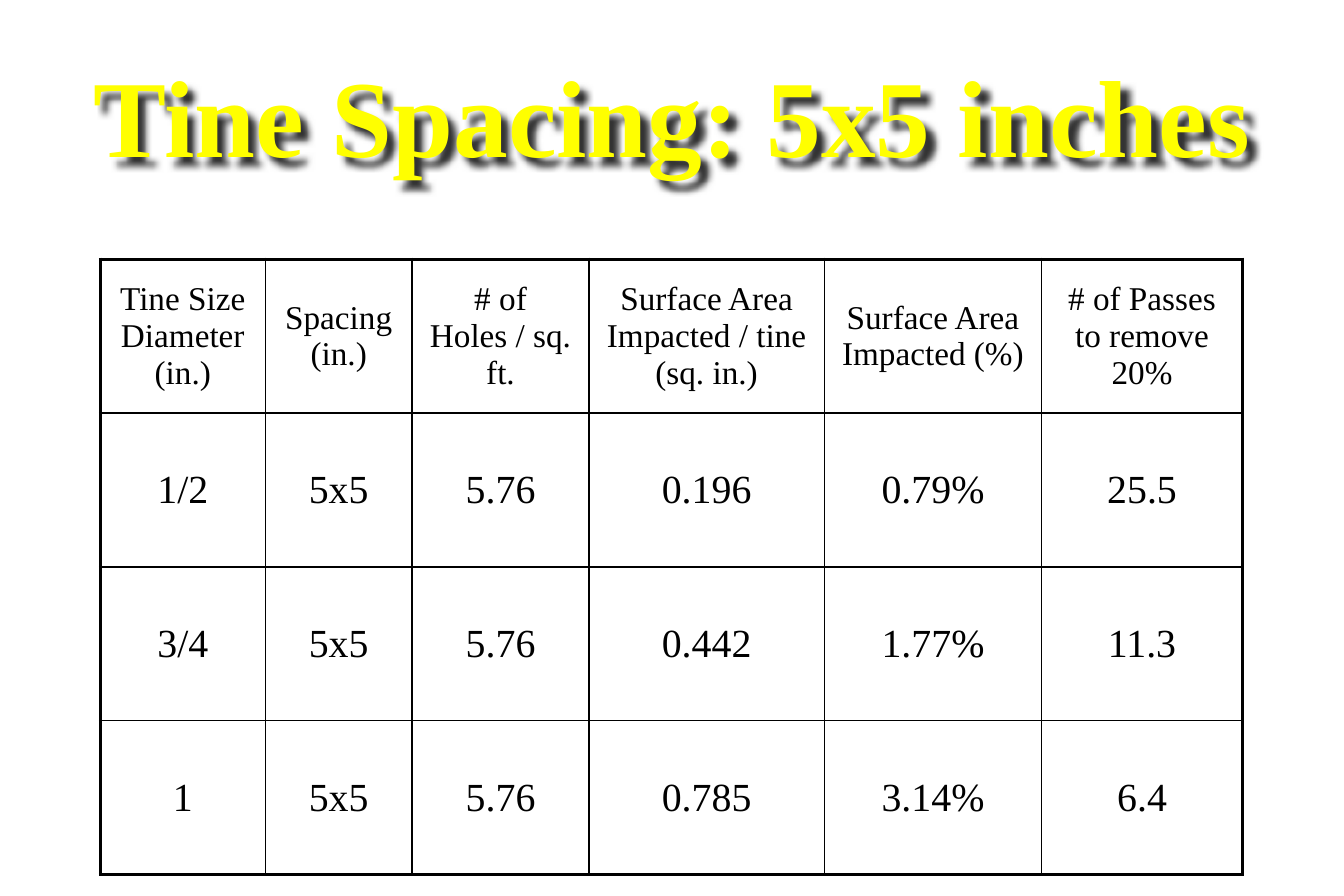
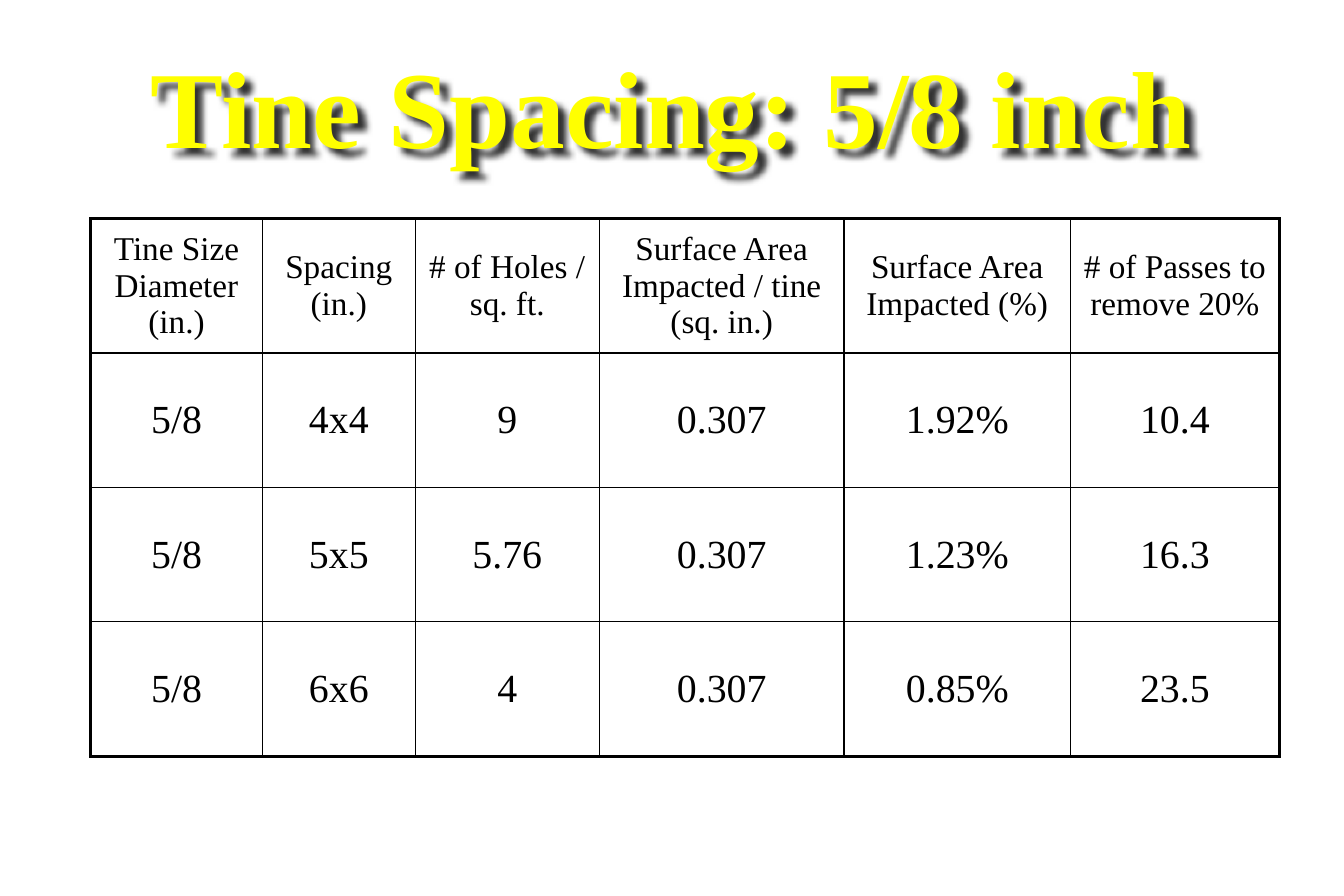
from dataclasses import dataclass

from lxml import etree
from pptx import Presentation
from pptx import util as u
from pptx.dml.color import RGBColor
from pptx.enum import text
from pptx.oxml import ns

EMU_PER_PX = 4572  # 200 px to the inch


@dataclass(frozen=True)
class Theme:
    font: str = "Times New Roman"
    title_color: str = "FFFF00"
    ink: str = "000000"
    page_color: str = "FFFFFF"
    title_size: int = 66
    header_size: int = 20
    body_size: int = 24
    outer_line: float = 2.25
    inner_line: float = 1


THEME = Theme()
PAGE_SIZE = (2250, 1500)
COLUMN_SHARES = (138, 123, 148, 197, 182, 168)
HEADERS = (
    "Tine Size Diameter (in.)",
    "Spacing (in.)",
    "# of Holes / sq. ft.",
    "Surface Area Impacted / tine (sq. in.)",
    "Surface Area Impacted (%)",
    "# of Passes to remove 20%",
)
PAGES = (
    {
        "title": "Tine Spacing: 5x5 inches",
        "title_box": (84, 66, 2082, 250),
        "table_box": (168, 434, 1912, 1030),
        "rows": (
            ("1/2", "5x5", "5.76", "0.196", "0.79%", "25.5"),
            ("3/4", "5x5", "5.76", "0.442", "1.77%", "11.3"),
            ("1", "5x5", "5.76", "0.785", "3.14%", "6.4"),
        ),
    },
    {
        "title": "Tine Spacing: 5/8 inch",
        "title_box": (168, 50, 1912, 250),
        "table_box": (152, 366, 1990, 900),
        "rows": (
            ("5/8", "4x4", "9", "0.307", "1.92%", "10.4"),
            ("5/8", "5x5", "5.76", "0.307", "1.23%", "16.3"),
            ("5/8", "6x6", "4", "0.307", "0.85%", "23.5"),
        ),
    },
)


def px(length):
    return u.Emu(round(length * EMU_PER_PX))


def add_child(parent, tag, **attributes):
    return etree.SubElement(parent, ns.qn(tag), attributes)


def write_centred(frame, words, size, color, bold=False):
    frame.word_wrap = True
    frame.vertical_anchor = text.MSO_ANCHOR.MIDDLE
    para = frame.paragraphs[0]
    para.alignment = text.PP_ALIGN.CENTER
    span = para.add_run()
    span.text = words
    span.font.name = THEME.font
    span.font.size = u.Pt(size)
    span.font.bold = bold
    span.font.color.rgb = RGBColor.from_string(color)


def add_soft_shadow(shape):
    """Cast a blurred shadow down and to the right; unfilled boxes shade their text."""
    effects = add_child(shape.element.spPr, "a:effectLst")
    shadow = add_child(effects, "a:outerShdw", blurRad="50800", dist="76200",
                       dir="2700000", algn="tl", rotWithShape="0")
    color = add_child(shadow, "a:srgbClr", val=THEME.ink)
    add_child(color, "a:alpha", val="80000")


def add_title(page, box, words):
    title = page.shapes.add_textbox(*map(px, box))
    write_centred(title.text_frame, words, THEME.title_size, THEME.title_color, bold=True)
    add_soft_shadow(title)


def set_borders(cell, outer_sides):
    """Rule all four sides of a cell, heavier on those at the table's edge."""
    properties = cell._tc.get_or_add_tcPr()
    for side in "LRTB":
        width = THEME.outer_line if side in outer_sides else THEME.inner_line
        line = add_child(properties, f"a:ln{side}", w=str(u.Pt(width)))
        fill = add_child(line, "a:solidFill")
        add_child(fill, "a:srgbClr", val=THEME.ink)


def add_tine_table(page, box, body_rows):
    rows = (HEADERS, *body_rows)
    last_row, last_column = len(rows) - 1, len(HEADERS) - 1
    width, height = box[2:]
    table = page.shapes.add_table(len(rows), len(HEADERS), *map(px, box)).table
    table.first_row = table.horz_banding = False
    for column, share in zip(table.columns, COLUMN_SHARES):
        column.width = px(width * share / sum(COLUMN_SHARES))
    for row_index, words_in_row in enumerate(rows):
        table.rows[row_index].height = px(height / len(rows))
        size = THEME.body_size if row_index else THEME.header_size
        for column_index, words in enumerate(words_in_row):
            cell = table.cell(row_index, column_index)
            edges = {"L": column_index == 0, "R": column_index == last_column,
                     "T": row_index == 0, "B": row_index == last_row}
            set_borders(cell, [side for side, is_outer in edges.items() if is_outer])
            cell.fill.background()
            write_centred(cell.text_frame, words, size, THEME.ink)
            cell.vertical_anchor = text.MSO_ANCHOR.MIDDLE


def add_tine_page(deck, content):
    page = deck.slides.add_slide(deck.slide_layouts[6])
    page.background.fill.solid()
    page.background.fill.fore_color.rgb = RGBColor.from_string(THEME.page_color)
    add_title(page, content["title_box"], content["title"])
    add_tine_table(page, content["table_box"], content["rows"])


def main():
    deck = Presentation()
    deck.slide_width, deck.slide_height = map(px, PAGE_SIZE)
    for content in PAGES:
        add_tine_page(deck, content)
    deck.save("out.pptx")


if __name__ == "__main__":
    main()
